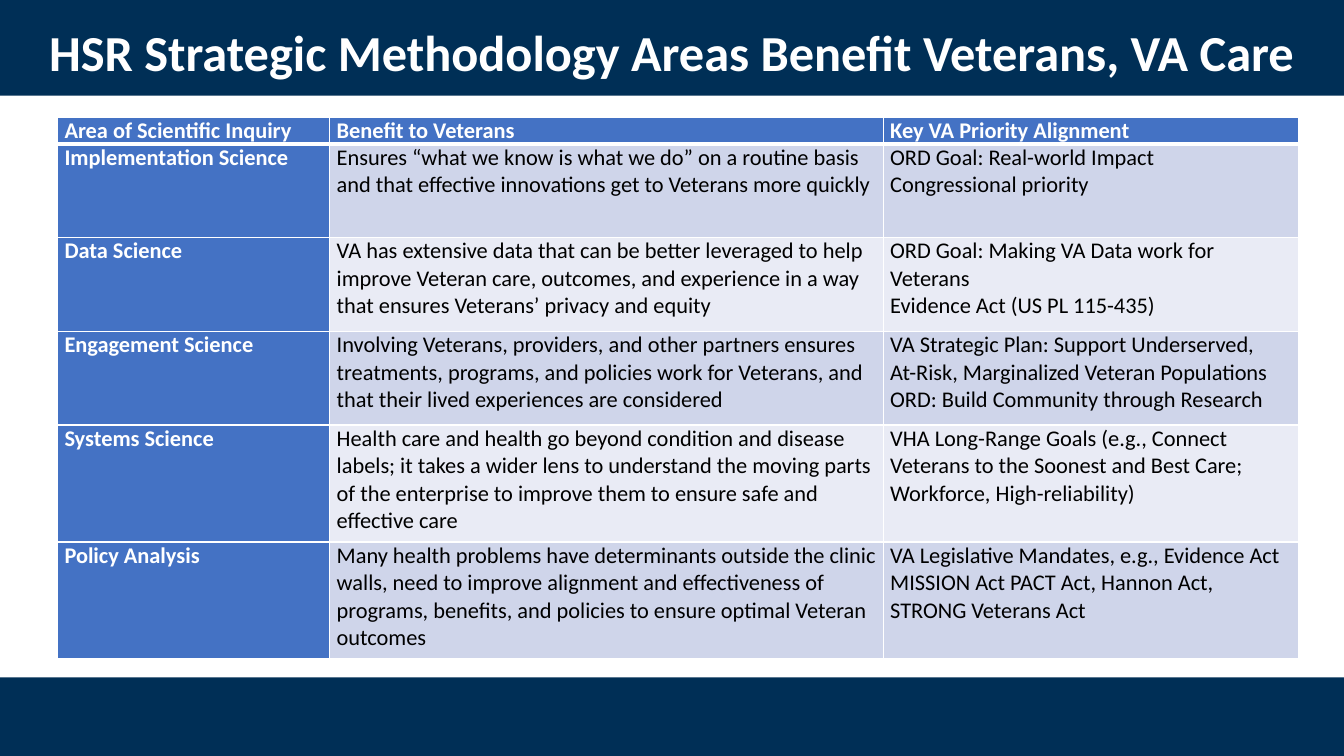
from copy import deepcopy

from lxml.etree import SubElement
from pptx import Presentation
from pptx.dml.color import RGBColor
from pptx.enum.shapes import MSO_SHAPE as Shape
from pptx.enum.text import MSO_ANCHOR as Anchor, PP_ALIGN as Align
from pptx.oxml.ns import qn
from pptx.util import Inches, Pt

NAVY = RGBColor(0x00, 0x2F, 0x56)
BLUE = RGBColor(0x44, 0x72, 0xC4)
BAND_DARK = RGBColor(0xCF, 0xD5, 0xEA)
BAND_LIGHT = RGBColor(0xE9, 0xEB, 0xF5)
WHITE = RGBColor(0xFF, 0xFF, 0xFF)
BLACK = RGBColor(0x00, 0x00, 0x00)

WIDTH, HEIGHT = 13.33, 7.5
TITLE = "HSR Strategic Methodology Areas Benefit Veterans, VA Care"
COLUMN_WIDTHS = [2.7, 5.49, 4.12]
ROW_HEIGHTS = [0.23, 0.93, 0.93, 0.93, 1.16, 1.16]

# Each cell is a list of paragraphs; "\n" is a line break inside one
ROWS = [
    [["Area of Scientific Inquiry"], ["Benefit to Veterans"], ["Key VA Priority Alignment"]],
    [["Implementation Science"],
     ["Ensures “what we know is what we do” on a routine basis and that effective "
      "innovations get to Veterans more quickly"],
     ["ORD Goal: Real-world Impact", "Congressional priority"]],
    [["Data Science"],
     ["VA has extensive data that can be better leveraged to help improve Veteran care, "
      "outcomes, and experience in a way that ensures Veterans’ privacy and equity"],
     ["ORD Goal: Making VA Data work for Veterans", "Evidence Act (US PL 115-435)"]],
    [["Engagement Science"],
     ["Involving Veterans, providers, and other partners ensures treatments, programs, and "
      "policies work for Veterans, and that their lived experiences are considered"],
     ["VA Strategic Plan: Support Underserved, \nAt-Risk, Marginalized Veteran Populations",
      "ORD: Build Community through Research"]],
    [["Systems Science"],
     ["Health care and health go beyond condition and disease labels; it takes a wider lens "
      "to understand the moving parts of the enterprise to improve them to ensure safe and "
      "effective care"],
     ["VHA Long-Range Goals (e.g., Connect Veterans to the Soonest and Best Care; "
      "Workforce, High-reliability)"]],
    [["Policy Analysis"],
     ["Many health problems have determinants outside the clinic walls, need to improve "
      "alignment and effectiveness of programs, benefits, and policies to ensure optimal "
      "Veteran outcomes"],
     ["VA Legislative Mandates, e.g., Evidence Act",
      "MISSION Act PACT Act, Hannon Act, STRONG Veterans Act"]],
]


def write(frame, paragraphs, size=16, color=BLACK, bold=False, align=Align.LEFT, spacing=None):
    for index, text in enumerate(paragraphs):
        para = frame.paragraphs[0] if index == 0 else frame.add_paragraph()
        para.alignment = align
        para.line_spacing = spacing
        for line_index, line in enumerate(text.split("\n")):
            if line_index:
                # The break takes the size of the text before it
                para.add_line_break()
                para._p[-1].append(deepcopy(span._r.rPr))
            span = para.add_run()
            span.text = line
            span.font.name = "Calibri"
            span.font.size = Pt(size)
            span.font.bold = bold
            span.font.color.rgb = color


def add_bar(page, left, top, width, height):
    bar = page.shapes.add_shape(
        Shape.RECTANGLE, Inches(left), Inches(top), Inches(width), Inches(height))
    bar.shadow.inherit = False
    bar.fill.solid()
    bar.fill.fore_color.rgb = NAVY
    bar.line.fill.background()


def add_title(page, left, top, width, height):
    box = page.shapes.add_textbox(Inches(left), Inches(top), Inches(width), Inches(height))
    frame = box.text_frame
    frame.word_wrap = True
    frame.vertical_anchor = Anchor.MIDDLE
    write(frame, [TITLE], size=36, color=WHITE, bold=True, align=Align.CENTER, spacing=0.9)


def set_borders(cell, **widths):
    properties = cell._tc.get_or_add_tcPr()
    for side in "LRTB":
        line = SubElement(properties, qn(f"a:ln{side}"), w=str(Pt(widths.get(side, 1))))
        fill = SubElement(line, qn("a:solidFill"))
        SubElement(fill, qn("a:srgbClr"), val=str(WHITE))


def add_areas_table(page, left, top, width, height):
    table = page.shapes.add_table(
        len(ROWS), len(COLUMN_WIDTHS),
        Inches(left), Inches(top), Inches(width), Inches(height)).table
    table.horz_banding = False
    for column, column_width in zip(table.columns, COLUMN_WIDTHS):
        column.width = Inches(column_width)
    for r, (row, row_height) in enumerate(zip(ROWS, ROW_HEIGHTS)):
        table.rows[r].height = Inches(row_height)
        for c, paragraphs in enumerate(row):
            cell = table.cell(r, c)
            cell.margin_left = cell.margin_right = Inches(0.07)
            cell.margin_top = cell.margin_bottom = 0
            # Thick rule between the header and the body
            set_borders(cell, B=3 if r == 0 else 1, T=3 if r == 1 else 1)
            heading = r == 0 or c == 0
            cell.fill.solid()
            cell.fill.fore_color.rgb = BLUE if heading else BAND_DARK if r % 2 else BAND_LIGHT
            write(cell.text_frame, paragraphs, color=WHITE if heading else BLACK, bold=heading)


def main():
    deck = Presentation()
    deck.slide_width, deck.slide_height = Inches(WIDTH), Inches(HEIGHT)
    page = deck.slides.add_slide(deck.slide_layouts[6])
    # Header and footer bars
    add_bar(page, 0, 0, WIDTH, 0.95)
    add_bar(page, 0, 6.72, WIDTH, HEIGHT - 6.72)
    # Content
    add_title(page, 0.17, 0.14, 12.99, 0.82)
    add_areas_table(page, 0.57, 1.16, sum(COLUMN_WIDTHS), sum(ROW_HEIGHTS))
    deck.save("out.pptx")


if __name__ == "__main__":
    main()
